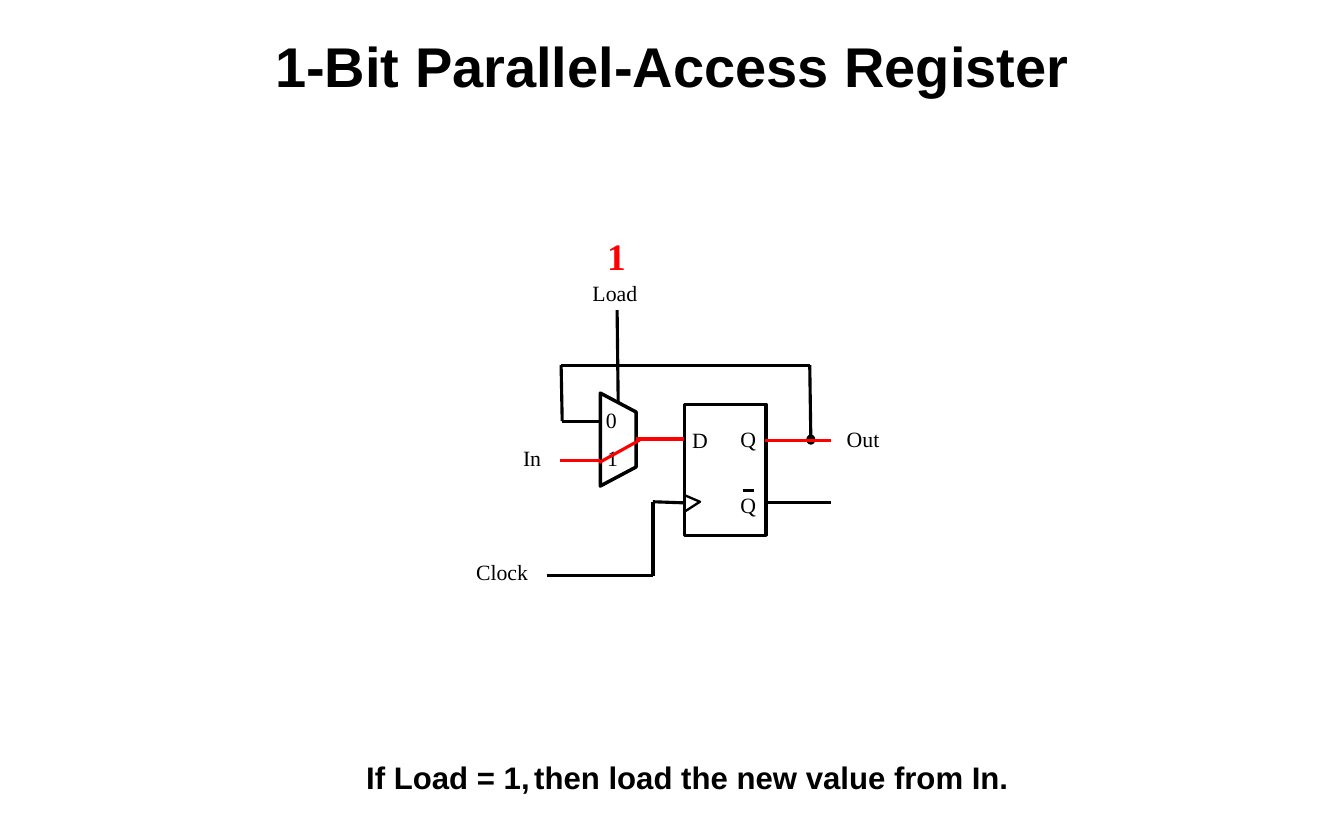
import pptx
import pptx.dml.color
import pptx.enum.shapes
import pptx.enum.text
import pptx.oxml
import pptx.oxml.ns
import pptx.util
from lxml import etree

COLUMNS, ROWS = 120, 75
BLACK, RED, WHITE = "000000", "FF0000", "FFFFFF"
SANS, SERIF = "Arial", "Times New Roman"


def color(value):
    return pptx.dml.color.RGBColor.from_string(value)


def write(frame, text, size=14, font=SERIF, ink=BLACK, bold=False,
          align=pptx.enum.text.PP_ALIGN.LEFT, anchor=pptx.enum.text.MSO_ANCHOR.TOP,
          inset=0, wrap=False):
    frame.auto_size = pptx.enum.text.MSO_AUTO_SIZE.NONE
    frame.word_wrap = wrap
    frame.vertical_anchor = anchor
    frame.margin_left = frame.margin_right = pptx.util.Inches(inset)
    frame.margin_top = frame.margin_bottom = 0
    paragraph = frame.paragraphs[0]
    paragraph.alignment = align
    run = paragraph.add_run()
    run.text = text
    run.font.size = pptx.util.Pt(size)
    run.font.name = font
    run.font.bold = bold
    run.font.color.rgb = color(ink)
    return paragraph


class Circuit:
    """Draws circuit elements on a slide, placed by grid columns and rows."""

    def __init__(self, presentation):
        self.slide = presentation.slides.add_slide(presentation.slide_layouts[1])
        self.column = presentation.slide_width / COLUMNS
        self.row = presentation.slide_height / ROWS

    def place(self, x, y):
        return round(x * self.column), round(y * self.row)

    def placeholder(self, index, text, x, y, width, height, **style):
        shape = self.slide.placeholders[index]
        shape.left, shape.top = self.place(x, y)
        shape.width, shape.height = self.place(width, height)
        return write(shape.text_frame, text, font=SANS, bold=True, inset=0.1, wrap=True,
                     anchor=pptx.enum.text.MSO_ANCHOR.MIDDLE, **style)

    def label(self, text, x, y, width, height=2.4, **style):
        shape = self.slide.shapes.add_textbox(*self.place(x, y), *self.place(width, height))
        write(shape.text_frame, text, **style)

    def outline(self, shape, width, fill=None):
        shape.shadow.inherit = False
        if fill:
            shape.fill.solid()
            shape.fill.fore_color.rgb = color(fill)
        else:
            shape.fill.background()
        shape.line.color.rgb = color(BLACK)
        shape.line.width = pptx.util.Pt(width)

    def preset(self, kind, x, y, width, height, line, fill):
        shape = self.slide.shapes.add_shape(kind, *self.place(x, y), *self.place(width, height))
        self.outline(shape, line, fill)

    def polygon(self, points, line, close):
        corners = [self.place(*point) for point in points]
        builder = self.slide.shapes.build_freeform(*corners[0], scale=1.0)
        builder.add_line_segments(corners[1:], close=close)
        self.outline(builder.convert_to_shape(), line)

    def wire(self, *points, ink=BLACK, width=2):
        for start, end in zip(points, points[1:]):
            connector = self.slide.shapes.add_connector(
                pptx.enum.shapes.MSO_CONNECTOR.STRAIGHT, *self.place(*start), *self.place(*end))
            connector.line.color.rgb = color(ink)
            connector.line.width = pptx.util.Pt(width)
            properties = connector._element.spPr
            etree.SubElement(properties, pptx.oxml.ns.qn("a:effectLst"))


def remove_bullet(paragraph, tab):
    properties = paragraph._p.get_or_add_pPr()
    properties.set("marL", "0")
    properties.set("indent", "0")
    etree.SubElement(properties, pptx.oxml.ns.qn("a:buNone"))
    tabs = etree.SubElement(properties, pptx.oxml.ns.qn("a:tabLst"))
    etree.SubElement(tabs, pptx.oxml.ns.qn("a:tab"), pos=str(tab), algn="l")


def main():
    presentation = pptx.Presentation()
    presentation.slide_width = pptx.util.Inches(12)
    presentation.slide_height = pptx.util.Inches(7.5)
    circuit = Circuit(presentation)
    shapes = pptx.enum.shapes.MSO_SHAPE

    circuit.placeholder(0, "1-Bit Parallel-Access Register", 10, 2.5, 100, 6.7, size=36,
                        align=pptx.enum.text.PP_ALIGN.CENTER)
    caption = circuit.placeholder(1, "If Load = 1,\tthen load the new value from In.",
                                  31.7, 67.4, 66.7, 4, size=20)
    caption.space_before = pptx.util.Pt(0)
    remove_bullet(caption, pptx.util.Inches(1.7))

    circuit.preset(shapes.OVAL, 72.1, 38.9, 0.6, 0.7, 1.5, BLACK)
    circuit.preset(shapes.RECTANGLE, 61.1, 36.1, 7.3, 11.7, 2.25, WHITE)
    circuit.polygon([(61.1, 45.7), (62.5, 44.8), (61.1, 44.2)], 1.5, close=False)
    circuit.polygon([(56.8, 41.7), (56.8, 36.8), (53.6, 35.1), (53.6, 43.4)], 2.25, close=True)

    circuit.wire((66.3, 43.8), (67.3, 43.8), width=1.5)
    circuit.wire((55.1, 27.7), (55.2, 36))
    circuit.wire((72.4, 39.3), (72.3, 32.6), (50.1, 32.6), (50.2, 37.6), (53.6, 37.6))
    circuit.wire((48.8, 51.4), (58.3, 51.4), (58.3, 44.8), (61.1, 44.9))
    circuit.wire((68.4, 44.9), (74.2, 44.9))

    for text, x, y, width in [
        ("D", 61.8, 38.1, 1.9), ("Q", 66.1, 38, 1.9), ("Q", 66.1, 43.9, 1.9),
        ("Clock", 42.5, 49.9, 5.2), ("In", 46.7, 39.7, 1.6), ("Out", 75.6, 38, 2.9),
        ("Load", 52.9, 25, 4.5), ("0", 54.1, 36.3, 1), ("1", 54.2, 39.7, 1),
    ]:
        circuit.label(text, x, y, width)

    circuit.wire((50, 41.1), (53.6, 41.1), ink=RED)
    circuit.wire((53.5, 41.3), (57.1, 39.3), ink=RED)
    circuit.wire((56.8, 39.2), (61.1, 39.2), ink=RED)
    circuit.wire((68.3, 39.3), (74.2, 39.3), ink=RED)
    circuit.label("1", 54.2, 20.8, 1.7, 4.1, size=24, ink=RED, bold=True)

    presentation.save("out.pptx")


if __name__ == "__main__":
    main()
